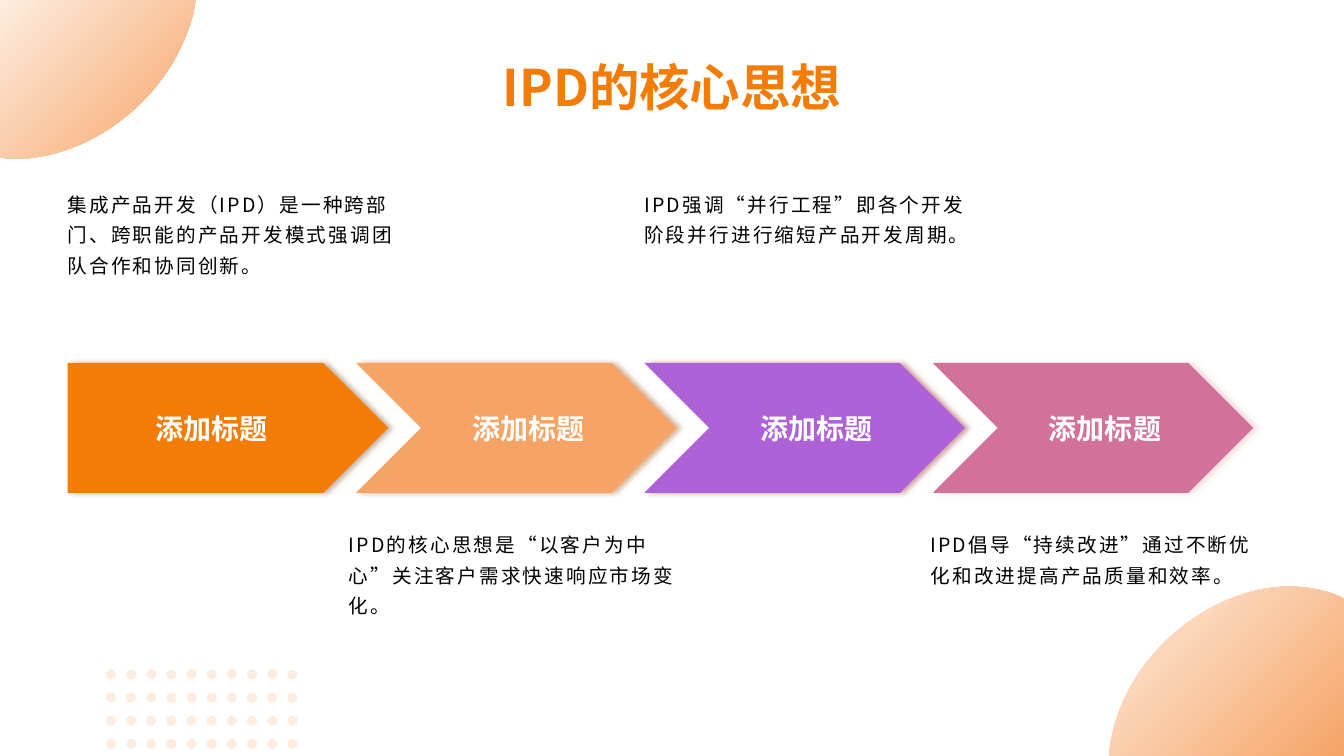
import pptx
import pptx.dml.color
import pptx.enum.shapes
import pptx.enum.text
import pptx.oxml
import pptx.oxml.ns
import pptx.util
from lxml import etree

FONT = "Noto Sans CJK SC"
TITLE = "IPD的核心思想"
WIDTH, HEIGHT = 13.33, 7.5
MARGIN, STEP = 0.67, 2.86
ARROW_TOP, ARROW_WIDTH, ARROW_HEIGHT = 3.6, 3.18, 1.29
NOTE_WIDTH, NOTE_ABOVE, NOTE_BELOW = 3.43, (1.79, 1.55), (5.17, 1.5)
ORANGE, PEACH, CREAM = "F37C07", "F6A466", "FDEDE0"
DOT_LEFT, DOT_TOP, DOT_SIZE = 1.05, 6.64, 0.1
DOT_COLUMNS, DOT_ROWS, DOT_STEP_X, DOT_STEP_Y = 10, 4, 0.2, 0.23

STAGES = [
    ("添加标题", ORANGE, "7A3E04", 0, NOTE_ABOVE,
     "集成产品开发（IPD）是一种跨部门、跨职能的产品开发模式强调团队合作和协同创新。"),
    ("添加标题", PEACH, "A44C0A", -0.07, NOTE_BELOW,
     "IPD的核心思想是“以客户为中心”关注客户需求快速响应市场变化。"),
    ("添加标题", "AD62D8", "911D1E", 0, NOTE_ABOVE,
     "IPD强调“并行工程”即各个开发阶段并行进行缩短产品开发周期。"),
    ("添加标题", "D27199", "EFAEAF", -0.02, NOTE_BELOW,
     "IPD倡导“持续改进”通过不断优化和改进提高产品质量和效率。"),
]

CORNERS = [
    [(0, 0), (1.94, 0), (1.92, 0.12), (1.84, 0.44, 1.66, 0.77, 1.38, 1.04),
     (0.98, 1.42, 0.48, 1.61, 0.04, 1.57), (0, 1.56)],
    [(12.78, 5.82), (12.96, 5.82, 13.13, 5.85, 13.29, 5.92), (WIDTH, 5.94),
     (WIDTH, HEIGHT), (11, HEIGHT), (11.01, 7.41),
     (11.06, 7.04, 11.25, 6.66, 11.57, 6.35),
     (11.93, 6.01, 12.38, 5.82, 12.78, 5.82)],
]

inch = pptx.util.Inches
SHAPES = pptx.enum.shapes.MSO_SHAPE
ALIGN = pptx.enum.text.PP_ALIGN
ANCHOR = pptx.enum.text.MSO_ANCHOR


def color(code):
    return pptx.dml.color.RGBColor.from_string(code)


def trace(corner, pieces=24):
    points = [corner[0]]
    for move in corner[1:]:
        if len(move) == 2:
            points.append(move)
            continue
        knots = [points[-1], move[:2], move[2:4], move[4:]]
        for piece in range(1, pieces + 1):
            t = piece / pieces
            weights = ((1 - t) ** 3, 3 * t * (1 - t) ** 2, 3 * t * t * (1 - t), t ** 3)
            points.append(tuple(sum(w * knot[axis] for w, knot in zip(weights, knots))
                                for axis in (0, 1)))
    return [(inch(x), inch(y)) for x, y in points]


def add_corner(page, corner):
    points = trace(corner)
    builder = page.shapes.build_freeform(*points[0])
    builder.add_line_segments(points[1:], close=True)
    shape = builder.convert_to_shape()
    shape.shadow.inherit = False
    shape.line.fill.background()
    shape.fill.gradient()
    shape.fill.gradient_angle = 315
    for stop, code, place in zip(shape.fill.gradient_stops, (CREAM, PEACH), (0, 1)):
        stop.color.rgb = color(code)
        stop.position = place


def add_shape(page, kind, left, top, width, height, code):
    shape = page.shapes.add_shape(kind, inch(left), inch(top), inch(width), inch(height))
    shape.shadow.inherit = False
    shape.fill.solid()
    shape.fill.fore_color.rgb = color(code)
    shape.line.fill.background()
    return shape


def add_box(page, left, top, width, height):
    return page.shapes.add_textbox(inch(left), inch(top), inch(width), inch(height))


def write(box, text, size, code, bold=False, align=ALIGN.CENTER, anchor=ANCHOR.MIDDLE):
    frame = box.text_frame
    frame.word_wrap = True
    frame.vertical_anchor = anchor
    para = frame.paragraphs[0]
    para.alignment = align
    span = para.add_run()
    span.text = text
    span.font.size = pptx.util.Pt(size)
    span.font.bold = bold
    span.font.color.rgb = color(code)
    span.font.name = FONT
    east = etree.SubElement(span.font._element, pptx.oxml.ns.qn("a:ea"))
    east.set("typeface", FONT)
    return para, span


def add_shadow(shape, code):
    effects = shape._element.spPr.find(pptx.oxml.ns.qn("a:effectLst"))
    effects.append(pptx.oxml.parse_xml(
        f'<a:outerShdw {pptx.oxml.ns.nsdecls("a")} blurRad="{pptx.util.Pt(4)}" '
        f'dist="{pptx.util.Pt(3)}" dir="0" algn="l" rotWithShape="0">'
        f'<a:srgbClr val="{code}"><a:alpha val="40000"/></a:srgbClr></a:outerShdw>'))


def add_stage(page, index, stage):
    label, code, shade, shift, (note_top, note_height), note = stage
    left = MARGIN + index * STEP
    kind = SHAPES.CHEVRON if index else SHAPES.PENTAGON
    arrow = add_shape(page, kind, left, ARROW_TOP, ARROW_WIDTH, ARROW_HEIGHT, code)
    add_shadow(arrow, shade)
    if index:
        arrow.text_frame.margin_left = inch(0.24)
        arrow.text_frame.margin_right = 0
    write(arrow, label, 20, "FFFFFF", bold=True)
    box = add_box(page, left + shift, note_top, NOTE_WIDTH, note_height)
    box.text_frame.margin_left = 0
    para, span = write(box, note, 14, "000000", align=ALIGN.LEFT, anchor=ANCHOR.TOP)
    para.line_spacing = 1.3
    para.space_after = pptx.util.Pt(10)
    span.font._element.set("spc", "150")


def main():
    """Build the slide on the core ideas of IPD."""
    deck = pptx.Presentation()
    deck.slide_width, deck.slide_height = inch(WIDTH), inch(HEIGHT)
    page = deck.slides.add_slide(deck.slide_layouts[6])
    for corner in CORNERS:
        add_corner(page, corner)
    for column in range(DOT_COLUMNS):
        for row in range(DOT_ROWS):
            add_shape(page, SHAPES.OVAL, DOT_LEFT + column * DOT_STEP_X,
                      DOT_TOP + row * DOT_STEP_Y, DOT_SIZE, DOT_SIZE, CREAM)
    write(add_box(page, MARGIN, 0.5, WIDTH - 2 * MARGIN, 0.71), TITLE, 36, ORANGE, bold=True)
    for index, stage in enumerate(STAGES):
        add_stage(page, index, stage)
    deck.save("out.pptx")


if __name__ == "__main__":
    main()
